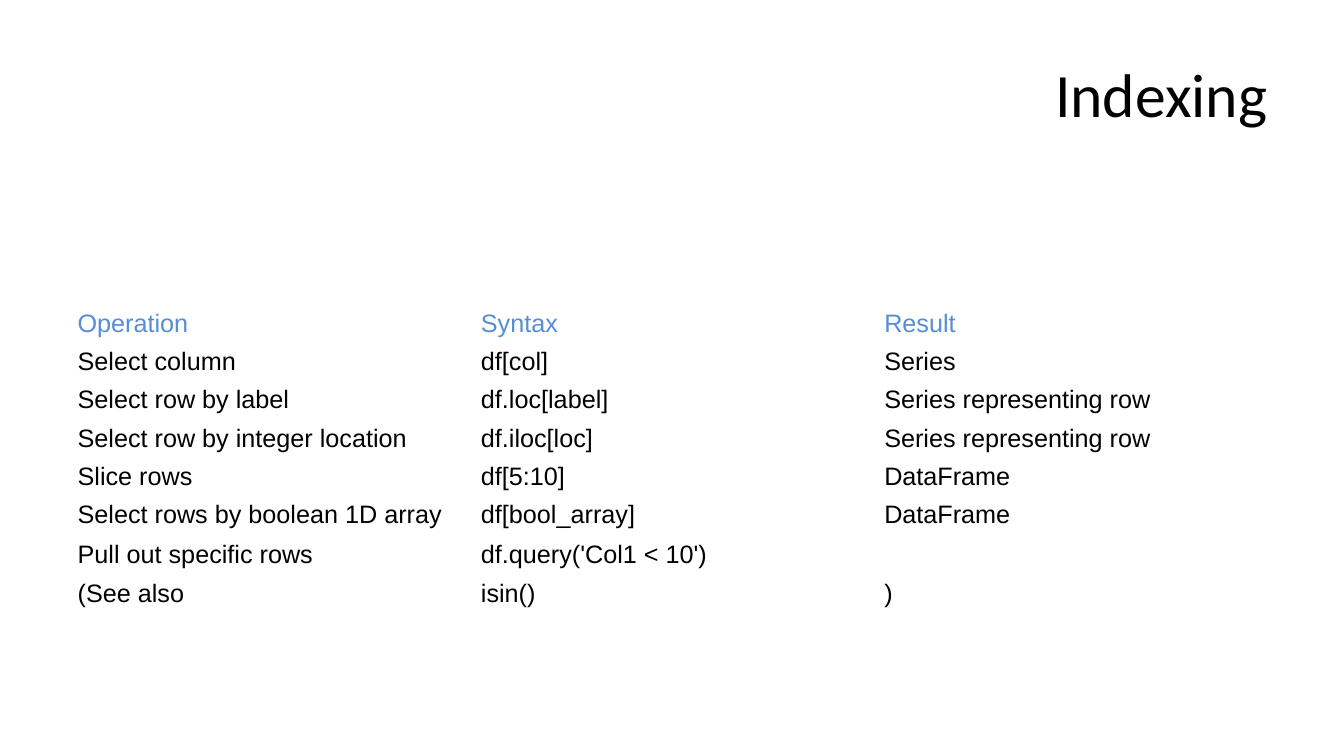
from pptx import Presentation
from pptx.dml.color import RGBColor
from pptx.enum.text import MSO_ANCHOR, PP_ALIGN
from pptx.util import Inches, Pt

OPERATIONS = [
    ("Operation", "Syntax", "Result"),
    ("Select column", "df[col]", "Series"),
    ("Select row by label", "df.loc[label]", "Series representing row"),
    ("Select row by integer location", "df.iloc[loc]", "Series representing row"),
    ("Slice rows", "df[5:10]", "DataFrame"),
    ("Select rows by boolean 1D array", "df[bool_array]", "DataFrame"),
    ("Pull out specific rows", "df.query('Col1 < 10')", ""),
    ("(See also", "isin()", ")"),
]


def set_font(paragraph, name, size, color):
    paragraph.font.name = name
    paragraph.font.size = Pt(size)
    paragraph.font.color.rgb = RGBColor.from_string(color)


prs = Presentation()
prs.slide_width = Inches(13.33)
prs.slide_height = Inches(7.5)
slide = prs.slides.add_slide(prs.slide_layouts[6])

title = slide.shapes.add_textbox(Inches(0.67), Inches(0.3), Inches(12), Inches(1.25)).text_frame
title.word_wrap = True
title.vertical_anchor = MSO_ANCHOR.MIDDLE
heading = title.paragraphs[0]
heading.text = "Indexing"
heading.alignment = PP_ALIGN.RIGHT
set_font(heading, "Calibri", 44, "000000")

table = slide.shapes.add_table(
    len(OPERATIONS), 3, Inches(0.67), Inches(3.02), Inches(12), Inches(3.06)
).table
table.first_row = False
table.horz_banding = False

for row, entries in enumerate(OPERATIONS):
    table.rows[row].height = Inches(0.38 if all(entries) else 0.4)
    for column, entry in enumerate(entries):
        cell = table.cell(row, column)
        cell.fill.background()
        cell.vertical_anchor = MSO_ANCHOR.MIDDLE
        cell.margin_top = cell.margin_bottom = Inches(0.04)
        cell.text = entry
        set_font(cell.text_frame.paragraphs[0], "Arial", 18, "000000" if row else "558ED5")

prs.save("out.pptx")
